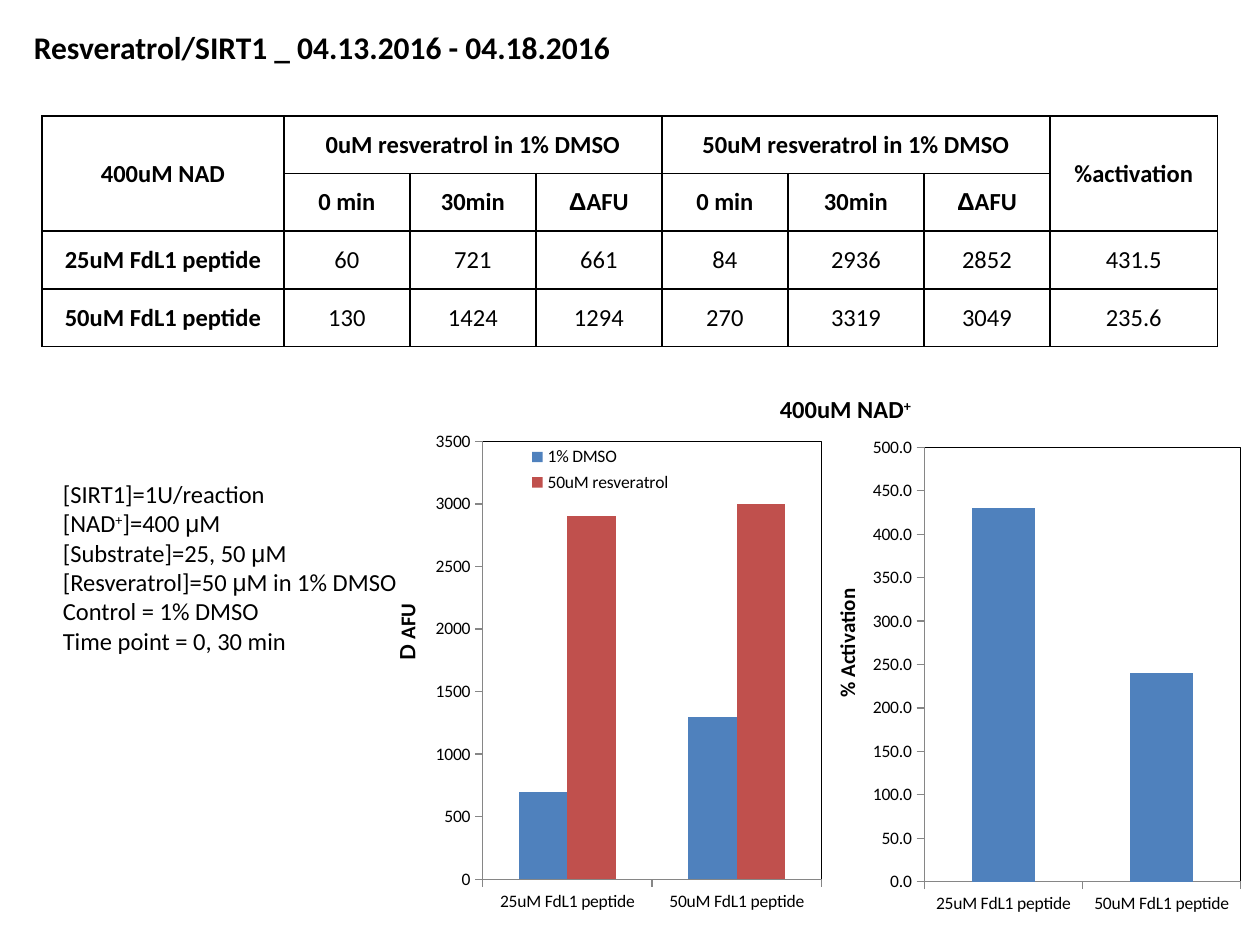
from itertools import groupby
from lxml import etree
from pptx import Presentation, util as u
from pptx.chart.data import CategoryChartData
from pptx.dml.color import RGBColor
from pptx.enum import chart as ch, text as t
from pptx.oxml.ns import qn

W, H = 10, 7.5
FONT, INK, GREY = "Calibri", "000000", "868686"
BLUE, RED = "4F81BD", "C0504D"
PEPS = ["25uM FdL1 peptide", "50uM FdL1 peptide"]
TIMES = ["0 min", "30min", "ΔAFU"]
GRID = [
    ["400uM NAD", "0uM resveratrol in 1% DMSO", "", "",
     "50uM resveratrol in 1% DMSO", "", "", "%activation"],
    ["", *TIMES, *TIMES, ""],
    [PEPS[0], "60", "721", "661", "84", "2936", "2852", "431.5"],
    [PEPS[1], "130", "1424", "1294", "270", "3319", "3049", "235.6"],
]
COLS = [1.92, 1, 1, 1, 1, 1.08, 1, 1.33]
SPANS = [((0, 0), (1, 0)), ((0, 1), (0, 3)), ((0, 4), (0, 6)), ((0, 7), (1, 7))]
NOTES = ["[SIRT1]=1U/reaction", "[NAD+]=400 μM", "[Substrate]=25, 50 μM",
         "[Resveratrol]=50 μM in 1% DMSO", "Control = 1% DMSO",
         "Time point = 0, 30 min"]
HEAD = ["Resveratrol/SIRT1 _ 04.13.2016 - 04.18.2016"]
LEFT = t.PP_ALIGN.LEFT
MID = t.PP_ALIGN.CENTER
TEXTS = [
    (HEAD, (0.17, 0.17, 4.82, 0.4), 18, True, LEFT),
    (NOTES, (0.4, 3.75, 2.87, 1.51), 14, False, LEFT),
    (["400uM NAD+"], (6.08, 3.08, 1.26, 0.34), 14, True, MID),
]
CHARTS = [
    dict(at=(6.58, 3.17, 3.37, 4.33), name=[("% Activation", FONT)],
         spot=(0, 0.34), plot=(0.224, 0.088, 0.746, 0.796), top=500,
         step=50, fmt="0.0", bars=[("% Activation", (430, 240), BLUE)], key=None),
    dict(at=(3.08, 3.01, 3.51, 4.49), name=[("D", "Lato"), (" AFU", FONT)],
         spot=(0, 0.39), plot=(0.214, 0.11, 0.766, 0.774), top=3500,
         step=500, fmt="0", key=(0.28, 0.11, 0.4, 0.1),
         bars=[("1% DMSO", (700, 1300), BLUE),
               ("50uM resveratrol", (2900, 3000), RED)]),
]


def rgb(code):
    """Turn a hex string into a colour."""
    return RGBColor.from_string(code)


def put(obj, **vals):
    """Set each named value on an object."""
    for key, val in vals.items():
        setattr(obj, key, val)


def style(font, size, bold=False, name=FONT):
    """Give a font its size, weight, face and colour."""
    put(font, size=u.Pt(size), bold=bold, name=name)
    font.color.rgb = rgb(INK)


def write(frame, lines, size, bold, align):
    """Write lines, with raised plus signs and Greek letters in Arial."""
    for i, line in enumerate(lines):
        para = frame.paragraphs[0] if i == 0 else frame.add_paragraph()
        para.alignment = align
        for mark, part in groupby(line, lambda c: c if c in "+μΔ" else ""):
            run = para.add_run()
            run.text = "".join(part)
            style(run.font, size, bold, "Arial" if mark in tuple("μΔ") else FONT)
            if mark == "+":
                run._r.get_or_add_rPr().set("baseline", "30000")


def outline(node, tag, color, width=1):
    """Add a solid line to an XML node."""
    line = etree.SubElement(node, qn(tag), w=str(u.Pt(width)))
    fill = etree.SubElement(line, qn("a:solidFill"))
    etree.SubElement(fill, qn("a:srgbClr"), val=color)


def place(node, spot, index, inner=False):
    """Give a chart part a manual layout in shares of the chart."""
    for old in node.findall(qn("c:layout")):
        node.remove(old)
    box = etree.Element(qn("c:layout"))
    node.insert(index, box)
    man = etree.SubElement(box, qn("c:manualLayout"))
    vals = [("layoutTarget", "inner")] if inner else []
    vals += [("xMode", "edge"), ("yMode", "edge"), *zip("xywh", spot)]
    for tag, val in vals:
        etree.SubElement(man, qn("c:" + tag), val=str(val))


def add_grid(slide):
    """Draw the table of readings."""
    size = (W / 30, 0.92, sum(COLS), 1.83)
    frame = slide.shapes.add_table(len(GRID), len(COLS), *map(u.Inches, size))
    table = frame.table
    put(table, first_row=False, horz_banding=False)
    for col, wide in zip(table.columns, COLS):
        col.width = u.Inches(wide)
    for r, row in enumerate(GRID):
        for c, word in enumerate(row):
            cell = table.cell(r, c)
            put(cell, vertical_anchor=t.MSO_ANCHOR.MIDDLE, margin_left=0,
                margin_right=0, margin_top=0, margin_bottom=0)
            write(cell.text_frame, [word], 14, r < 2 or c == 0, MID)
            for side in "LRTB":
                outline(cell._tc.get_or_add_tcPr(), "a:ln" + side, INK)
            cell.fill.background()
    for a, b in SPANS:
        table.cell(*a).merge(table.cell(*b))


def add_bars(slide, at, name, spot, plot, top, step, fmt, bars, key):
    """Draw one column chart of the peptides."""
    data = CategoryChartData(number_format=fmt)
    data.categories = PEPS
    for label, vals, _ in bars:
        data.add_series(label, vals)
    chart = slide.shapes.add_chart(
        ch.XL_CHART_TYPE.COLUMN_CLUSTERED, *map(u.Inches, at), data).chart
    put(chart, has_title=False, has_legend=bool(key))
    style(chart.font, 10)
    put(chart.plots[0], gap_width=150, overlap=0, vary_by_categories=False)
    for item, (_, _, color) in zip(chart.plots[0].series, bars):
        item.format.fill.solid()
        item.format.fill.fore_color.rgb = rgb(color)
    for axis in (chart.category_axis, chart.value_axis):
        put(axis, has_major_gridlines=False,
            major_tick_mark=ch.XL_TICK_MARK.OUTSIDE,
            minor_tick_mark=ch.XL_TICK_MARK.NONE)
        axis.format.line.color.rgb = rgb(GREY)
    axis = chart.value_axis
    put(axis, minimum_scale=0, maximum_scale=top, major_unit=step)
    put(axis.tick_labels, number_format=fmt, number_format_is_linked=False)
    frame = axis.axis_title.text_frame
    for word, face in name:
        run = frame.paragraphs[0].add_run()
        run.text = word
        style(run.font, 12, True, face)
    frame._txBody.find(qn("a:bodyPr")).set("rot", "-5400000")
    place(axis.axis_title._element, spot, 1)
    area = chart._chartSpace.chart.plotArea
    place(area, plot, 0, True)
    outline(etree.SubElement(area, qn("c:spPr")), "a:ln", INK, 0.75)
    if key:
        put(chart.legend, position=ch.XL_LEGEND_POSITION.RIGHT,
            include_in_layout=False)
        place(chart.legend._element, key, 1)


def main():
    """Build the slide and save it."""
    deck = Presentation()
    put(deck, slide_width=u.Inches(W), slide_height=u.Inches(H))
    slide = deck.slides.add_slide(deck.slide_layouts[6])
    add_grid(slide)
    for item in CHARTS:
        add_bars(slide, **item)
    for lines, at, *look in TEXTS:
        frame = slide.shapes.add_textbox(*map(u.Inches, at)).text_frame
        put(frame, word_wrap=False, auto_size=t.MSO_AUTO_SIZE.SHAPE_TO_FIT_TEXT)
        write(frame, lines, *look)
    deck.save("out.pptx")


if __name__ == "__main__":
    main()
